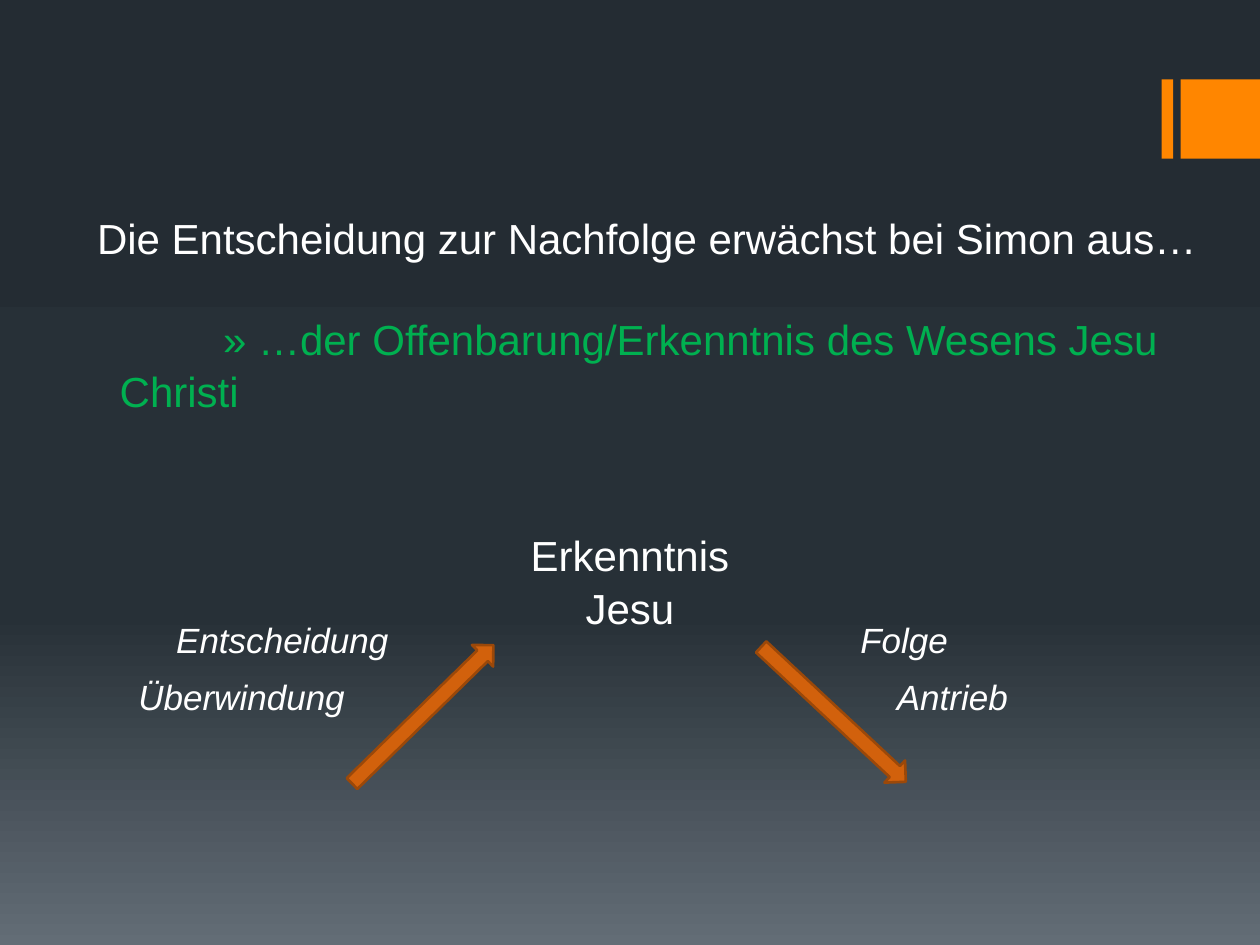
from copy import deepcopy

from pptx import Presentation
from pptx.dml.color import RGBColor
from pptx.enum.shapes import MSO_SHAPE
from pptx.enum.text import MSO_ANCHOR, MSO_AUTO_SIZE, PP_ALIGN
from pptx.oxml import parse_xml
from pptx.oxml.ns import nsdecls, qn
from pptx.util import Inches, Pt

RECTANGLE, ARROW = MSO_SHAPE.RECTANGLE, MSO_SHAPE.RIGHT_ARROW
TOP, NO_FIT = MSO_ANCHOR.TOP, MSO_AUTO_SIZE.NONE
LEFT, CENTER = PP_ALIGN.LEFT, PP_ALIGN.CENTER

FONT = "Arial"
COLORS = {
    "text": "FFFFFF", "answer": "00B050", "accent": "FF8600",
    "arrow": "D2610C", "arrow_edge": "9B4809",
}
BACKGROUND_STOPS = [(0, "242C33"), (0.65, "273037"), (1, "636D76")]
LABEL_HEIGHT = 0.44


def rgb(name):
    return RGBColor.from_string(COLORS[name])


def place(shape, box):
    shape.left, shape.top, shape.width, shape.height = map(Inches, box)


def write(shape, text, size=24, color="text", align=LEFT, italic=False):
    frame = shape.text_frame
    frame.word_wrap = True
    frame.auto_size = NO_FIT
    frame.vertical_anchor = TOP
    para = frame.paragraphs[0]
    para.alignment = align
    para.line_spacing = 1.04
    para.space_before = Pt(0)
    span = para.add_run()
    span.text = text
    span.font.name = FONT
    span.font.size = Pt(size)
    span.font.italic = italic
    span.font.color.rgb = rgb(color)
    return para


def add_text(page, box, text, **style):
    write(page.shapes.add_textbox(*map(Inches, box)), text, **style)


def add_solid(page, kind, box, color):
    shape = page.shapes.add_shape(kind, *map(Inches, box))
    shape.shadow.inherit = False
    shape.fill.solid()
    shape.fill.fore_color.rgb = rgb(color)
    shape.line.fill.background()
    return shape


def paint_background(page):
    fill = page.background.fill
    fill.gradient()
    fill.gradient_angle = 270
    stop_list = page.element.find(".//" + qn("a:gsLst"))
    stop_list.append(deepcopy(stop_list[-1]))
    for stop, (position, color) in zip(fill.gradient_stops, BACKGROUND_STOPS):
        stop.position = position
        stop.color.rgb = RGBColor.from_string(color)


def add_accent(page, box):
    """Narrow bar, gap and square that fill the box from left to right."""
    left, top, width, height = box
    add_solid(page, RECTANGLE, (left, top, 0.09, height), "accent")
    add_solid(page, RECTANGLE, (left + width - height, top, height, height), "accent")


def add_statement(page, box):
    """Title on the first line, answer below it after a blank line's gap."""
    left, top, width, height = box
    gap = 0.8
    title, body = page.shapes.title, page.placeholders[1]
    place(title, (left, top, width, 0.5))
    write(title, "Die Entscheidung zur Nachfolge erwächst bei Simon aus…")
    place(body, (left, top + gap, width, height - gap))
    para = write(body, "» …der Offenbarung/Erkenntnis des Wesens Jesu Christi",
                 color="answer")
    layout = para._p.get_or_add_pPr()
    layout.set("marL", str(Inches(0.18)))
    layout.set("indent", str(Inches(0.82)))
    layout.append(parse_xml(f"<a:buNone {nsdecls('a')}/>"))


def add_arrow(page, box, angle):
    arrow = add_solid(page, ARROW, box, "arrow")
    arrow.rotation = angle
    arrow.line.color.rgb = rgb("arrow_edge")
    arrow.line.width = Pt(1.5)


def add_turning_point(page, box):
    """Peak in the middle, a rising arrow before it and a falling one after."""
    left, top, width, _ = box
    peak_width = 2.36
    add_text(page, (left + (width - peak_width) / 2, top, peak_width, 0.91),
             "Erkenntnis Jesu", align=CENTER)
    for offset, angle in ((1.57, 315.6), (4.83, 43)):
        add_arrow(page, (left + offset, top + 1.41, 1.57, 0.24), angle)
    rows = [
        (0.71, (0.3, "Entscheidung"), (5.73, "Folge")),
        (1.16, (0, "Überwindung"), (6.02, "Antrieb")),
    ]
    for row, *labels in rows:
        for offset, text in labels:
            add_text(page, (left + offset, top + row, 2.2, LABEL_HEIGHT),
                     text, size=20, italic=True)


def main():
    deck = Presentation()
    deck.slide_width, deck.slide_height = Inches(10), Inches(7.5)
    page = deck.slides.add_slide(deck.slide_layouts[1])
    paint_background(page)
    add_accent(page, (9.22, 0.63, 0.78, 0.63))
    add_statement(page, (0.67, 1.62, 9.06, 2.12))
    add_turning_point(page, (1, 4.14, 8, 1.8))
    deck.save("out.pptx")


if __name__ == "__main__":
    main()
